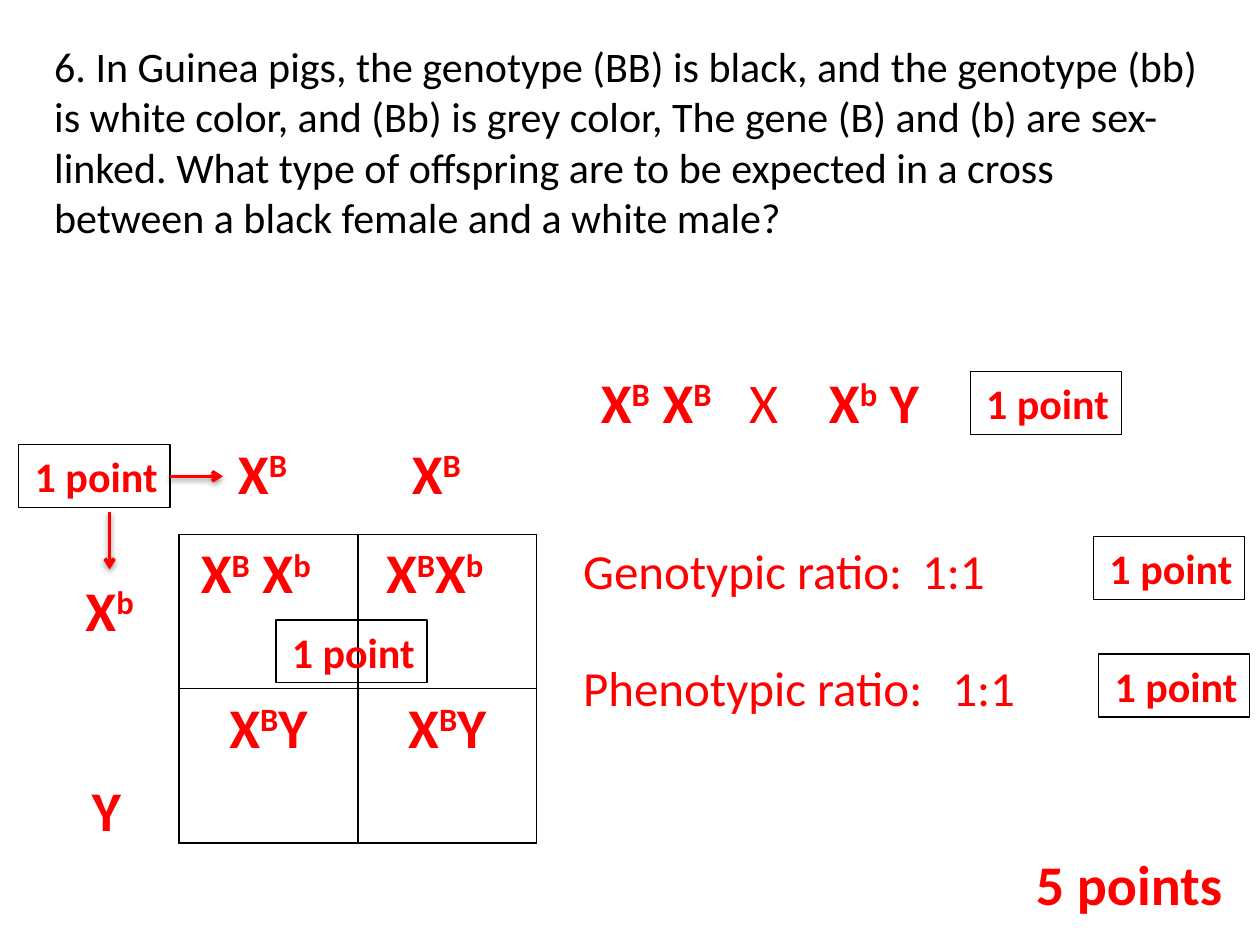
from lxml.etree import SubElement
from pptx import Presentation
from pptx.dml.color import RGBColor
from pptx.enum.shapes import MSO_CONNECTOR as Connector, MSO_SHAPE as Preset
from pptx.enum.text import MSO_ANCHOR as Anchor, MSO_AUTO_SIZE as AutoSize, PP_ALIGN as Align
from pptx.oxml.ns import qn
from pptx.util import Inches, Pt

COLORS = {"ink": "000000", "answer": "FF0000"}
FONT = "Calibri"
UNIT = 0.1  # the grid has 100 columns and 75 rows, each this many inches

QUESTION = (
    "6. In Guinea pigs, the genotype (BB) is black, and the genotype (bb) is white color, "
    "and (Bb) is grey color, The gene (B) and (b) are sex-linked. What type of offspring are "
    "to be expected in a cross between a black female and a white male?"
)


def grid(*cells):
    return [Inches(cell * UNIT) for cell in cells]


class Sheet:
    def __init__(self, page):
        self.page = page

    def color(self, name):
        return RGBColor.from_string(COLORS[name])

    def fill_para(self, para, text, size, color="answer", bold=True, align=Align.LEFT,
                  tabs=(), gap=0):
        """Fill a paragraph; ^ raises the next letter and ~ switches bold off or on."""
        para.alignment = align
        if gap:
            para.space_before = Pt(gap)
        if tabs:
            stops = SubElement(para._p.get_or_add_pPr(), qn("a:tabLst"))
            for stop in grid(*tabs):
                SubElement(stops, qn("a:tab"), pos=str(int(stop)), algn="l")
        font = para.font
        font.name, font.size, font.bold = FONT, Pt(size), bold
        font.color.rgb = self.color(color)
        for index, part in enumerate(text.split("~")):
            base, *raised = part.split("^")
            pieces = [(base, False)]
            for piece in raised:
                pieces += [(piece[0], True), (piece[1:], False)]
            for words, is_raised in pieces:
                if not words:
                    continue
                span = para.add_run()
                span.text = words
                if index % 2:
                    span.font.bold = not bold
                if is_raised:
                    span.font._element.set("baseline", "30000")

    def title(self, at, text, size):
        title = self.page.shapes.title
        title.left, title.top, title.width, title.height = grid(*at)
        frame = title.text_frame
        frame.word_wrap, frame.auto_size = True, AutoSize.NONE
        frame.vertical_anchor = Anchor.TOP
        self.fill_para(frame.paragraphs[0], text, size, "ink", bold=False)

    def text(self, at, lines, size, gap=0, tabs=((),), **style):
        """Add lines with a gap between them; tabs holds one set of stops per line."""
        frame = self.page.shapes.add_textbox(*grid(*at)).text_frame
        frame.word_wrap = True
        for index, line in enumerate(lines):
            para = frame.add_paragraph() if index else frame.paragraphs[0]
            self.fill_para(para, line, size, gap=gap if index else 0,
                           tabs=tabs[index % len(tabs)], **style)

    def score(self, left, top):
        box = self.page.shapes.add_shape(Preset.RECTANGLE, *grid(left, top, 12, 5))
        box.shadow.inherit = False
        box.fill.background()
        box.line.color.rgb = self.color("ink")
        box.line.width = Pt(0.75)
        box.text_frame.vertical_anchor = Anchor.TOP
        self.fill_para(box.text_frame.paragraphs[0], "1 point", 24, align=Align.RIGHT)
        return box

    def arrow(self, start, end, source=None):
        """Draw an arrow, joined to the right side of source if there is one."""
        line = self.page.shapes.add_connector(Connector.STRAIGHT, *grid(*start, *end))
        if source is not None:
            line.begin_connect(source, 3)
        line.line.color.rgb = self.color("answer")
        line.line.width = Pt(2)
        SubElement(line.line._get_or_add_ln(), qn("a:tailEnd"), type="arrow")

    def border(self, cell):
        properties = cell._tc.get_or_add_tcPr()
        for place, side in enumerate(("lnL", "lnR", "lnT", "lnB")):
            edge = SubElement(properties, qn(f"a:{side}"), w=str(int(Pt(1))))
            fill = SubElement(edge, qn("a:solidFill"))
            SubElement(fill, qn("a:srgbClr"), val=COLORS["ink"])
            properties.insert(place, edge)

    def punnett_square(self, at, rows):
        table = self.page.shapes.add_table(len(rows), len(rows[0]), *grid(*at)).table
        table.first_row = table.horz_banding = False
        for row, genotypes in enumerate(rows):
            for column, genotype in enumerate(genotypes):
                cell = table.cell(row, column)
                cell.fill.background()
                self.border(cell)
                if row == 0:
                    cell.margin_right = Inches(0.3)
                self.fill_para(cell.text_frame.paragraphs[0], genotype, 32, align=Align.CENTER)


def main():
    deck = Presentation()
    deck.slide_width, deck.slide_height = grid(100, 75)
    sheet = Sheet(deck.slides.add_slide(deck.slide_layouts[5]))

    sheet.title((3.3, 2.7, 93.2, 21.9), QUESTION, 24)
    sheet.text((78.8, 66.9, 19.2, 6.4), ["5 points"], 32, align=Align.RIGHT)
    sheet.punnett_square((14.2, 42.4, 28.4, 24.5),
                         [["X^B X^b", "X^BX^b"], ["X^BY", "X^BY"]])

    sheet.text((46.7, 28.7, 35.5, 6.4), ["X^B X^B\t~X~\tX^b Y"], 32, tabs=[(11.8, 18.1)])
    sheet.text((17.9, 34.3, 24.7, 6.4), ["X^B\tX^B"], 32, tabs=[(13.8,)])
    sheet.text((3.3, 45.2, 8.3, 19), ["X^b", "Y "], 32, gap=76, align=Align.RIGHT)
    sheet.text((45.3, 42.4, 50.2, 15.1), ["Genotypic ratio:\t1:1", "Phenotypic ratio:\t1:1"], 28,
               gap=33, tabs=[(26.9,), (29.3,)], bold=False)

    for left, top in [(77, 29.5), (87.2, 51.9), (86.8, 42.6), (21.9, 49.2)]:
        sheet.score(left, top)
    gamete_score = sheet.score(1.5, 35.3)
    sheet.arrow((13.5, 37.8), (17.7, 37.8), gamete_score)
    sheet.arrow((8.7, 40.6), (8.7, 45.2))

    deck.save("out.pptx")


if __name__ == "__main__":
    main()
